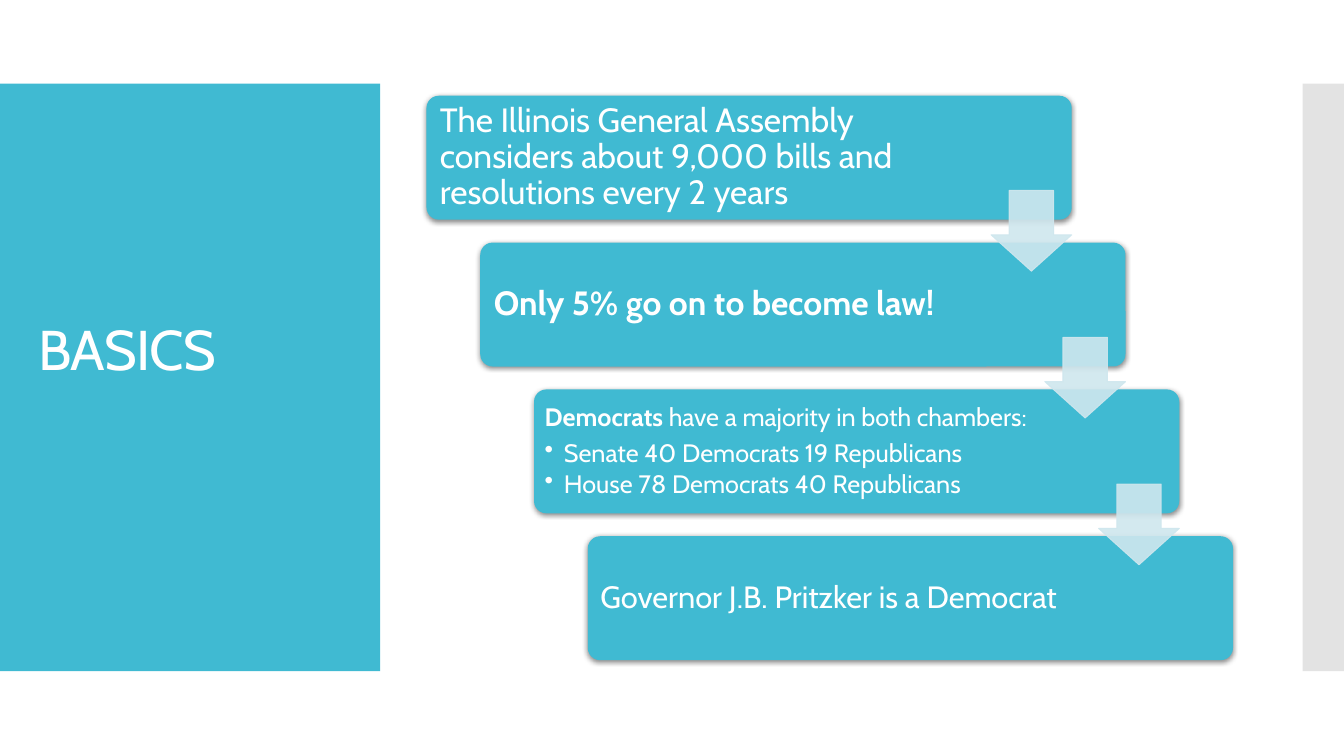
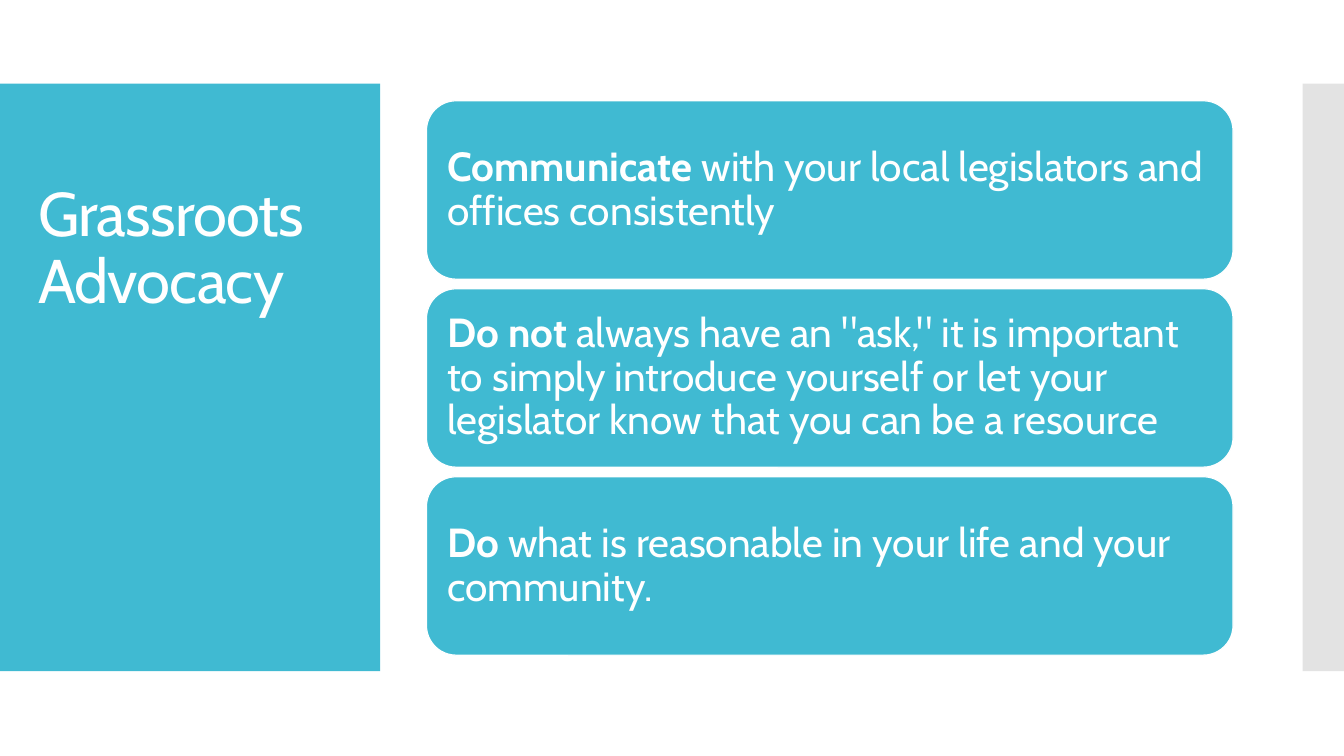
"""Build two slides on state politics and grassroots advocacy."""
import dataclasses

import lxml.etree
import pptx
import pptx.dml.color
import pptx.enum.shapes
import pptx.enum.text
import pptx.oxml.ns
import pptx.util

Inches = pptx.util.Inches
Pt = pptx.util.Pt
RGB = pptx.dml.color.RGBColor.from_string
Kind = pptx.enum.shapes.MSO_SHAPE
Anchor = pptx.enum.text.MSO_ANCHOR
qn = pptx.oxml.ns.qn
child = lxml.etree.SubElement


@dataclasses.dataclass(frozen=True)
class Theme:
    font: str = "Cabin"
    teal: str = "40BAD2"
    gray: str = "C8C8C8"
    pale: str = "CFE7EE"
    white: str = "FFFFFF"
    black: str = "000000"
    title: int = 40
    large: int = 44
    lead: int = 24
    note: int = 22
    small: int = 18
    card: int = 29


theme = Theme()


def draw(slide, kind, box, fill, line=None, width=0.75, alpha=100):
    """Add a filled preset shape, with an optional outline."""
    shape = slide.shapes.add_shape(kind, *map(Inches, box))
    shape.shadow.inherit = False
    shape.fill.solid()
    shape.fill.fore_color.rgb = RGB(fill)
    if line:
        shape.line.color.rgb = RGB(line)
        shape.line.width = Pt(width)
    else:
        shape.line.fill.background()
    if alpha < 100:
        for color in shape._element.spPr.iter(qn("a:srgbClr")):
            child(color, qn("a:alpha"), val=str(alpha * 1000))
    return shape


def write(shape, text, size, anchor=Anchor.MIDDLE, inset=None, right=None,
          track=0, after=0.35):
    """Write lines; a part before | is bold and a leading • makes a bullet."""
    frame = shape.text_frame
    frame.word_wrap = True
    frame.vertical_anchor = anchor
    if inset is not None:
        frame.margin_left = frame.margin_top = frame.margin_bottom = Inches(inset)
        frame.margin_right = Inches(inset if right is None else right)
    for i, line in enumerate(text.split("\n")):
        para = frame.add_paragraph() if i else frame.paragraphs[0]
        bullet = line.startswith("•")
        if bullet:
            props = para._p.get_or_add_pPr()
            props.set("marL", str(Inches(0.19)))
            props.set("indent", str(-Inches(0.19)))
            child(props, qn("a:buChar"), char="•")
        para.alignment = pptx.enum.text.PP_ALIGN.LEFT
        para.line_spacing = 0.9
        para.space_after = Pt(round(size * (0.15 if bullet else after), 1))
        bold, _, plain = line.lstrip("•").rpartition("|")
        for part, heavy in ((bold, True), (plain, False)):
            if part:
                run = para.add_run()
                run.text = part
                run.font.name = theme.font
                run.font.size = Pt(size)
                run.font.bold = heavy
                run.font.color.rgb = RGB(theme.white)
                if track:
                    run._r.get_or_add_rPr().set("spc", str(track))


deck = pptx.Presentation()
deck.slide_width = Inches(13.33)
deck.slide_height = Inches(7.5)

titles = [
    ("BASICS", theme.title, 2.6),
    ("Grassroots Advocacy", theme.large, 1.94),
]
for title, size, height in titles:
    slide = deck.slides.add_slide(deck.slide_layouts[6])
    draw(slide, Kind.RECTANGLE, (0, 0.83, 3.77, 5.83), theme.teal)
    draw(slide, Kind.RECTANGLE, (12.92, 0.83, 0.41, 5.83), theme.gray, alpha=50)
    label = slide.shapes.add_textbox(*map(Inches, (0.28, 1.25, 3.1, height)))
    write(label, title, size, anchor=Anchor.BOTTOM, track=-60, after=0)

basics, advice = deck.slides

steps = [
    ("The Illinois General Assembly considers about 9,000 bills and "
     "resolutions every 2 years", theme.lead, 0.1),
    ("Only 5% go on to become law!|", theme.lead, 0.1),
    ("Democrats| have a majority in both chambers:\n"
     "•Senate 40 Democrats 19 Republicans\n"
     "•House 78 Democrats 40 Republicans", theme.small, 0.07),
    ("Governor J.B. Pritzker is a Democrat", theme.note, 0.09),
]
spots = [(4.23 + 1.6 * i / 3, 0.95 + 4.37 * i / 3) for i in range(len(steps))]
for (text, size, inset), (left, top) in zip(steps, spots):
    step = draw(basics, Kind.ROUNDED_RECTANGLE, (left, top, 6.4, 1.23), theme.teal)
    step.adjustments[0] = 0.1
    effects = step._element.spPr.find(qn("a:effectLst"))
    shade = child(effects, qn("a:outerShdw"), blurRad=str(Pt(3.5)),
                  dist=str(Pt(1.1)), dir="5400000", rotWithShape="0")
    color = child(shade, qn("a:srgbClr"), val=theme.black)
    child(color, qn("a:alpha"), val="45000")
    write(step, text, size, inset=inset, right=1.36 + inset)

for left, top in spots[:-1]:
    arrow = draw(basics, Kind.DOWN_ARROW, (left + 5.6, top + 0.94, 0.8, 0.8),
                 theme.pale, line=theme.pale, alpha=90)
    arrow.adjustments[0] = 0.55
    arrow.adjustments[1] = 0.45

cards = [
    "Communicate| with your local legislators and offices consistently",
    'Do not |always have an "ask," it is important to simply introduce '
    "yourself or let your legislator know that you can be a resource",
    "Do| what is reasonable in your life and your community.",
]
for i, text in enumerate(cards):
    card = draw(advice, Kind.ROUNDED_RECTANGLE, (4.23, 1 + 3.73 * i / 2, 8, 1.77),
                theme.teal, line=theme.white, width=0.85)
    write(card, text, theme.card, inset=0.12)

deck.save("out.pptx")
